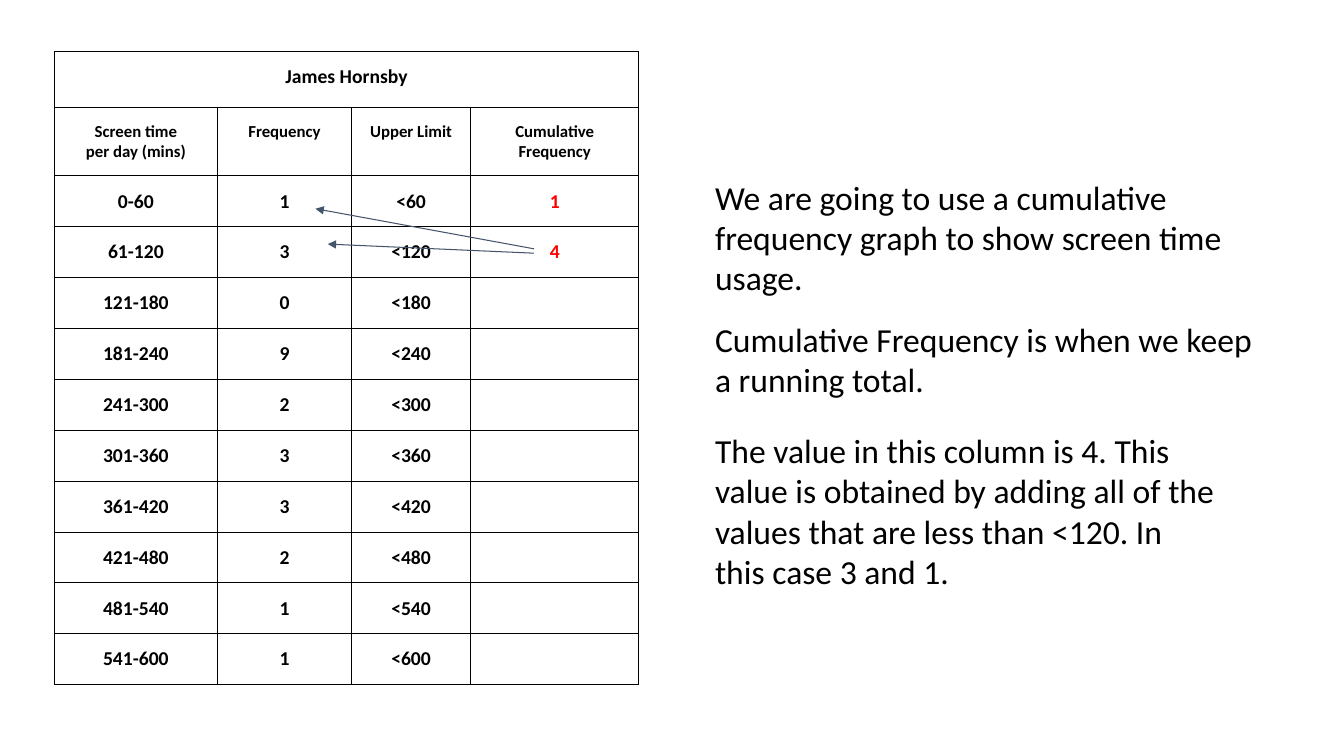
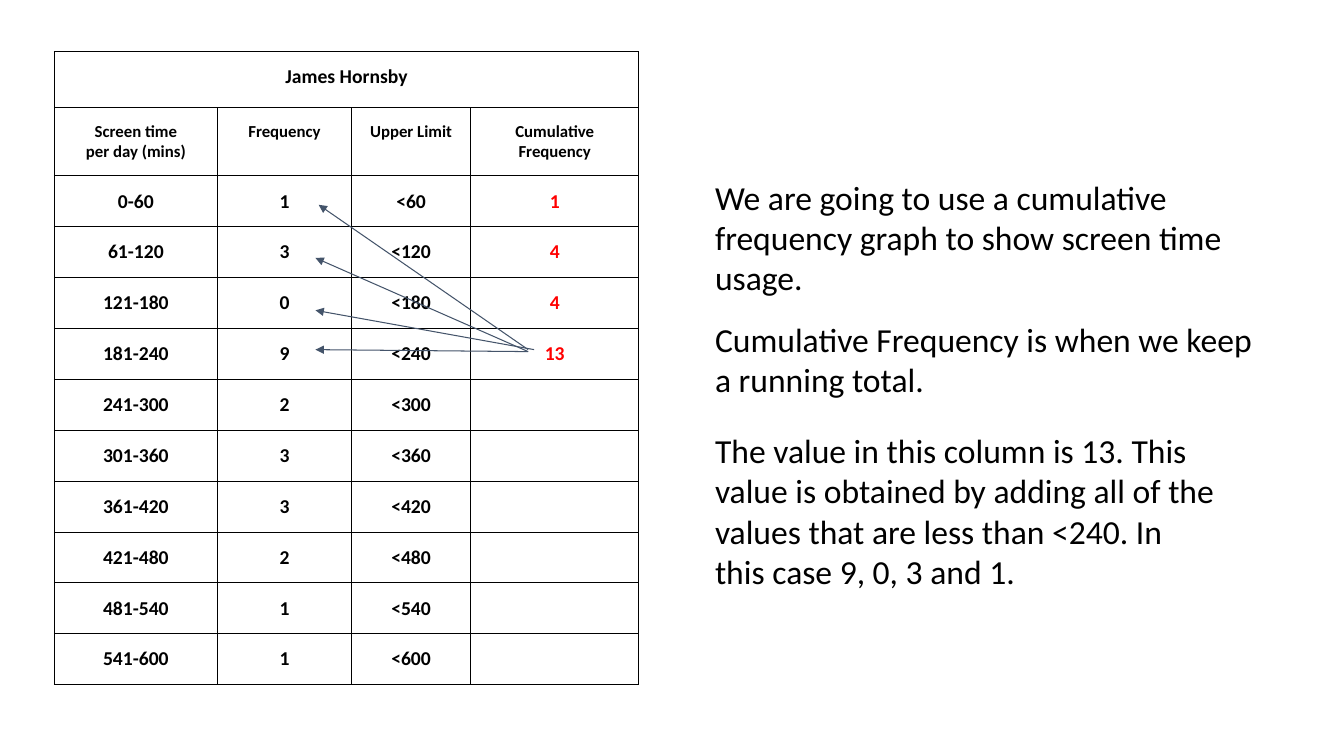
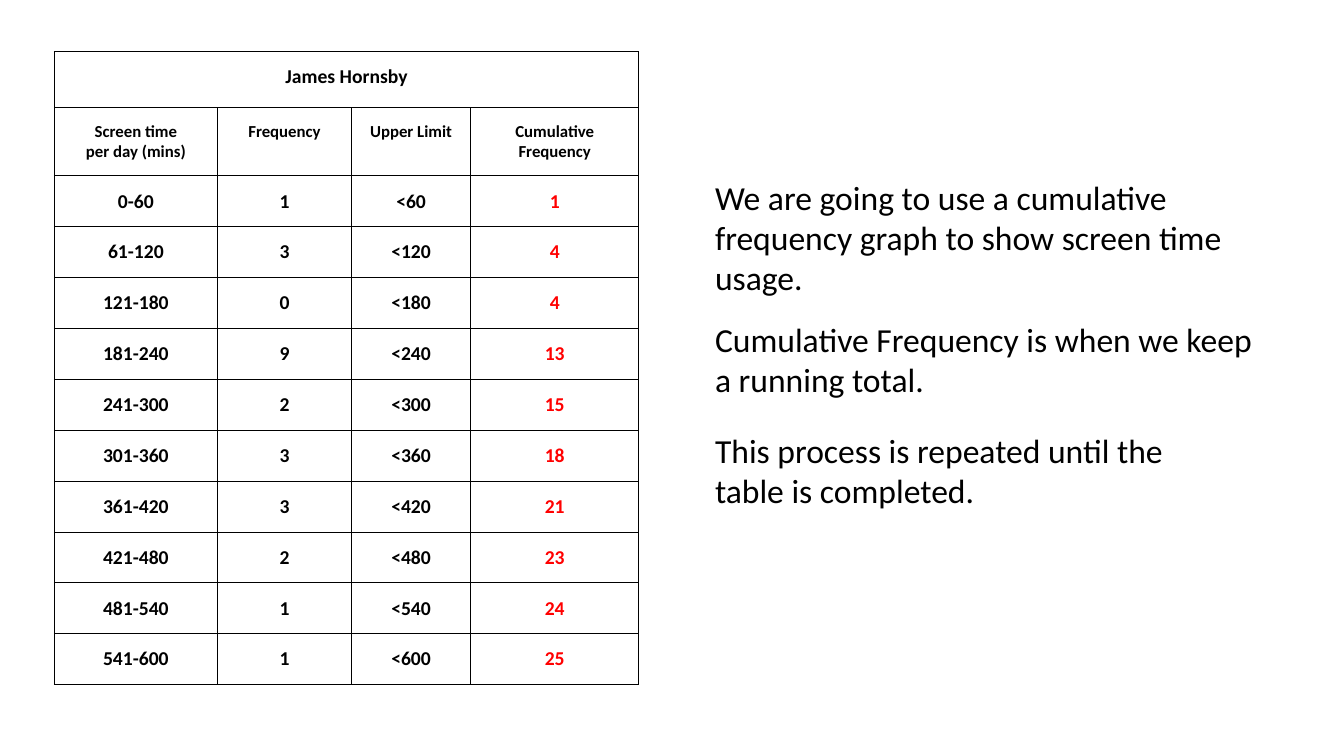
from dataclasses import dataclass
from itertools import accumulate

from lxml.etree import SubElement
from pptx import Presentation
from pptx.dml.color import RGBColor
from pptx.enum.shapes import MSO_CONNECTOR
from pptx.enum.text import MSO_ANCHOR, PP_ALIGN
from pptx.oxml.ns import qn
from pptx.slide import Slide
from pptx.table import _Cell
from pptx.text.text import TextFrame
from pptx.util import Cm, Pt

BLACK = RGBColor(0x00, 0x00, 0x00)
RED = RGBColor(0xFF, 0x00, 0x00)
SLATE = RGBColor(0x44, 0x54, 0x6A)
FONT = "Calibri"
INSET = Cm(0.34)

TABLE_LEFT, TABLE_TOP = 1.37, 1.3
COLUMN_WIDTHS = [4.11, 3.38, 3, 4.24]
TITLE_HEIGHT, HEADING_HEIGHT, DATA_HEIGHT = 1.42, 1.71, 1.28
HEADINGS = ["Screen time\nper day (mins)", "Frequency", "Upper Limit", "Cumulative Frequency"]
INTERVAL = 60
FREQUENCIES = [1, 3, 0, 9, 2, 3, 3, 2, 1, 1]
TOTALS = list(accumulate(FREQUENCIES))
TEXT_LEFT = 17.68


@dataclass(frozen=True)
class Note:
    text: str
    top: float
    width: float
    height: float


@dataclass(frozen=True)
class Arrow:
    start_x: float
    start_y: float
    end_x: float
    end_y: float


@dataclass(frozen=True)
class Step:
    totals_shown: int
    explanation: str
    arrows: tuple[Arrow, ...] = ()


SHARED_NOTES = [
    Note("We are going to use a cumulative frequency graph to show screen time usage.", 4.11, 15.5, 3.15),
    Note("Cumulative Frequency is when we keep a running total.", 7.7, 14.58, 2),
]

STEPS = [
    Step(
        2,
        "The value in this column is 4. This value is obtained by adding all of the "
        "values that are less than <120. In this case 3 and 1.",
        (Arrow(13.46, 6.38, 8.26, 6.15), Arrow(13.46, 6.27, 7.95, 5.26)),
    ),
    Step(
        4,
        "The value in this column is 13. This value is obtained by adding all of the "
        "values that are less than <240. In this case 9, 0, 3 and 1.",
        (
            Arrow(13.31, 8.86, 7.95, 8.81),
            Arrow(13.46, 8.81, 7.95, 7.82),
            Arrow(13.31, 8.86, 7.95, 6.5),
            Arrow(13.31, 8.81, 8.03, 5.16),
        ),
    ),
    Step(len(TOTALS), "This process is repeated until the table is completed."),
]


def write_text(
    text_frame: TextFrame,
    text: str,
    *,
    size: float = 14,
    color: RGBColor = BLACK,
    bold: bool = False,
    alignment: PP_ALIGN = PP_ALIGN.LEFT,
) -> None:
    text_frame.text = text
    for paragraph in text_frame.paragraphs:
        paragraph.alignment = alignment
        for run in paragraph.runs:
            run.font.name = FONT
            run.font.size = Pt(size)
            run.font.bold = bold
            run.font.color.rgb = color


def outline_cell(cell: _Cell) -> None:
    properties = cell._tc.get_or_add_tcPr()
    for side in ("a:lnL", "a:lnR", "a:lnT", "a:lnB"):
        border = SubElement(properties, qn(side), w=str(Pt(0.75)))
        fill = SubElement(border, qn("a:solidFill"))
        SubElement(fill, qn("a:srgbClr"), val=str(BLACK))
    cell.fill.background()


def write_cell(cell: _Cell, text: str, *, size: float = 14, color: RGBColor = BLACK) -> None:
    cell.margin_left = cell.margin_right = cell.margin_top = cell.margin_bottom = INSET
    cell.vertical_anchor = MSO_ANCHOR.TOP
    write_text(cell.text_frame, text, size=size, color=color, bold=True, alignment=PP_ALIGN.CENTER)


def add_frequency_table(slide: Slide, totals_shown: int) -> None:
    heights = [TITLE_HEIGHT, HEADING_HEIGHT] + [DATA_HEIGHT] * len(FREQUENCIES)
    table = slide.shapes.add_table(
        len(heights), len(COLUMN_WIDTHS),
        Cm(TABLE_LEFT), Cm(TABLE_TOP), Cm(sum(COLUMN_WIDTHS)), Cm(sum(heights)),
    ).table
    table.first_row = False
    table.horz_banding = False
    for column, width in zip(table.columns, COLUMN_WIDTHS):
        column.width = Cm(width)
    for row, height in zip(table.rows, heights):
        row.height = Cm(height)
    for cell in table.iter_cells():
        outline_cell(cell)

    table.cell(0, 0).merge(table.cell(0, len(COLUMN_WIDTHS) - 1))
    write_cell(table.cell(0, 0), "James Hornsby")
    for column_index, heading in enumerate(HEADINGS):
        write_cell(table.cell(1, column_index), heading, size=12)

    for index, frequency in enumerate(FREQUENCIES):
        lower = index * INTERVAL + 1 if index else 0
        upper = (index + 1) * INTERVAL
        for column_index, text in enumerate([f"{lower}-{upper}", str(frequency), f"<{upper}"]):
            write_cell(table.cell(index + 2, column_index), text)
        if index < totals_shown:
            write_cell(table.cell(index + 2, 3), str(TOTALS[index]), color=RED)


def add_note(slide: Slide, note: Note) -> None:
    shape = slide.shapes.add_textbox(Cm(TEXT_LEFT), Cm(note.top), Cm(note.width), Cm(note.height))
    text_frame = shape.text_frame
    text_frame.word_wrap = True
    text_frame.margin_left = text_frame.margin_right = INSET
    text_frame.margin_top = text_frame.margin_bottom = INSET
    write_text(text_frame, note.text, size=24)


def add_arrow(slide: Slide, arrow: Arrow) -> None:
    connector = slide.shapes.add_connector(
        MSO_CONNECTOR.STRAIGHT,
        Cm(arrow.start_x), Cm(arrow.start_y), Cm(arrow.end_x), Cm(arrow.end_y),
    )
    connector.line.color.rgb = SLATE
    connector.line.width = Pt(0.75)
    SubElement(connector.line._get_or_add_ln(), qn("a:tailEnd"), type="triangle")
    SubElement(connector._element.spPr, qn("a:effectLst"))


def main() -> None:
    presentation = Presentation()
    presentation.slide_width = Cm(33.87)
    presentation.slide_height = Cm(19.05)
    blank_layout = presentation.slide_layouts[6]
    for step in STEPS:
        slide = presentation.slides.add_slide(blank_layout)
        add_frequency_table(slide, step.totals_shown)
        for note in [*SHARED_NOTES, Note(step.explanation, 10.49, 13.28, 2.67)]:
            add_note(slide, note)
        for arrow in step.arrows:
            add_arrow(slide, arrow)
    presentation.save("out.pptx")


if __name__ == "__main__":
    main()
